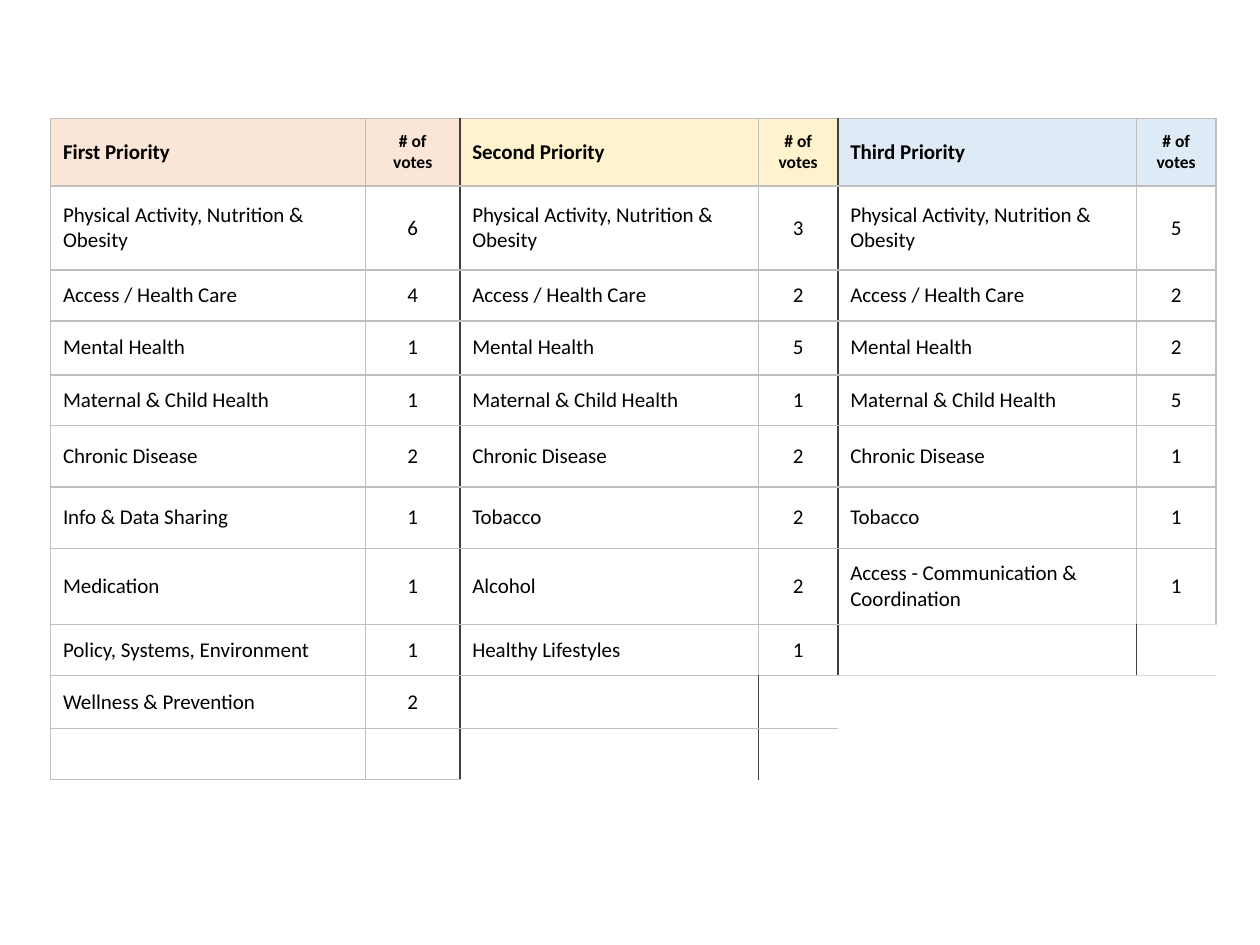
import pptx
import pptx.dml.color
import pptx.enum.text
import pptx.oxml
import pptx.util
from pptx.oxml.ns import qn

Cm = pptx.util.Cm
GRAY, DARK, PALE = "BFBFBF", "404040", "D9D9D9"
COMMON = ["Physical Activity, Nutrition & Obesity", "Access / Health Care",
          "Mental Health", "Maternal & Child Health", "Chronic Disease"]
GROUPS = [
    ("First Priority", "FBE5D6",
     COMMON + ["Info & Data Sharing", "Medication",
               "Policy, Systems, Environment", "Wellness & Prevention", ""],
     [6, 4, 1, 1, 2, 1, 1, 1, 2, ""]),
    ("Second Priority", "FFF2CC",
     COMMON + ["Tobacco", "Alcohol", "Healthy Lifestyles"],
     [3, 2, 5, 1, 2, 2, 2, 1]),
    ("Third Priority", "DEEBF7",
     COMMON + ["Tobacco", "Access - Communication & Coordination"],
     [5, 2, 2, 5, 1, 1, 1]),
]
WIDTHS = [6.35, 1.9, 6.02, 1.6, 6.02, 1.6]
HEIGHTS = [1.17, 1.7, 1.02, 1.09, 0.89, 1.24, 1.24, 0.94, 1.02, 1.07, 1.02]
NO_GRID = "{2D5ABB26-0587-4C30-8999-92F81FD0307C}"


def color(code):
    return pptx.dml.color.RGBColor.from_string(code)


def write(cell, text, size=12, bold=False, center=False):
    align = pptx.enum.text.PP_ALIGN
    para = cell.text_frame.paragraphs[0]
    para.alignment = align.CENTER if center else align.LEFT
    run = para.add_run()
    run.text = text
    run.font.name = "Calibri"
    run.font.size = pptx.util.Pt(size)
    run.font.bold = bold
    run.font.color.rgb = color("000000")
    cell.vertical_anchor = pptx.enum.text.MSO_ANCHOR.MIDDLE
    cell.margin_left = cell.margin_right = Cm(0.25)
    cell.margin_top = cell.margin_bottom = Cm(0.25)


def border(cell, side, code):
    props = cell._tc.get_or_add_tcPr()
    line = props.makeelement(qn("a:ln" + side), {"w": "12700"})
    fill = line.makeelement(qn("a:solidFill"), {})
    fill.append(fill.makeelement(qn("a:srgbClr"), {"val": code}))
    line.append(fill)
    props.append(line)


class Deck:
    def __init__(self):
        self.show = pptx.Presentation()
        self.show.slide_width = Cm(25.4)
        self.show.slide_height = Cm(19.05)
        self.slide = self.show.slides.add_slide(self.show.slide_layouts[6])

    def table(self, left, top, widths, heights):
        frame = self.slide.shapes.add_table(
            len(heights), len(widths), Cm(left), Cm(top),
            Cm(sum(widths)), Cm(sum(heights)))
        table = frame.table
        table.first_row = table.horz_banding = False
        table._tbl.tblPr.find(qn("a:tableStyleId")).text = NO_GRID
        for col, width in zip(table.columns, widths):
            col.width = Cm(width)
        for row, height in zip(table.rows, heights):
            row.height = Cm(height)
        return table

    def edges(self, cell, row, col, depths):
        group, votes = divmod(col, 2)
        depth = depths[group]
        inside = row < depth
        split = group > 0 and not votes
        end = PALE if group == len(depths) - 1 else GRAY
        if inside or split and row < depths[group - 1]:
            border(cell, "L", DARK if split else GRAY)
        if inside:
            last = group == len(depths) - 1
            border(cell, "R", DARK if votes and not last else GRAY)
        if row <= depth:
            border(cell, "T", end if row == depth else GRAY)
        if inside:
            border(cell, "B", end if row == depth - 1 else GRAY)

    def votes(self, table, groups):
        depths = [len(names) + 1 for _, _, names, _ in groups]
        for row in range(len(table.rows)):
            for col in range(len(table.columns)):
                cell = table.cell(row, col)
                self.edges(cell, row, col, depths)
                cell.fill.background()
        for index, (title, tint, names, counts) in enumerate(groups):
            columns = ([title] + names, ["# of votes"] + counts)
            for side, texts in enumerate(columns):
                for row, text in enumerate(texts):
                    cell = table.cell(row, 2 * index + side)
                    head = row == 0
                    if head:
                        cell.fill.solid()
                        cell.fill.fore_color.rgb = color(tint)
                    if text != "":
                        write(cell, str(text), bold=head, center=side == 1,
                              size=10 if head and side else 12)


def main():
    deck = Deck()
    table = deck.table(1.02, 2.39, WIDTHS, HEIGHTS)
    deck.votes(table, GROUPS)
    deck.show.save("out.pptx")


if __name__ == "__main__":
    main()
